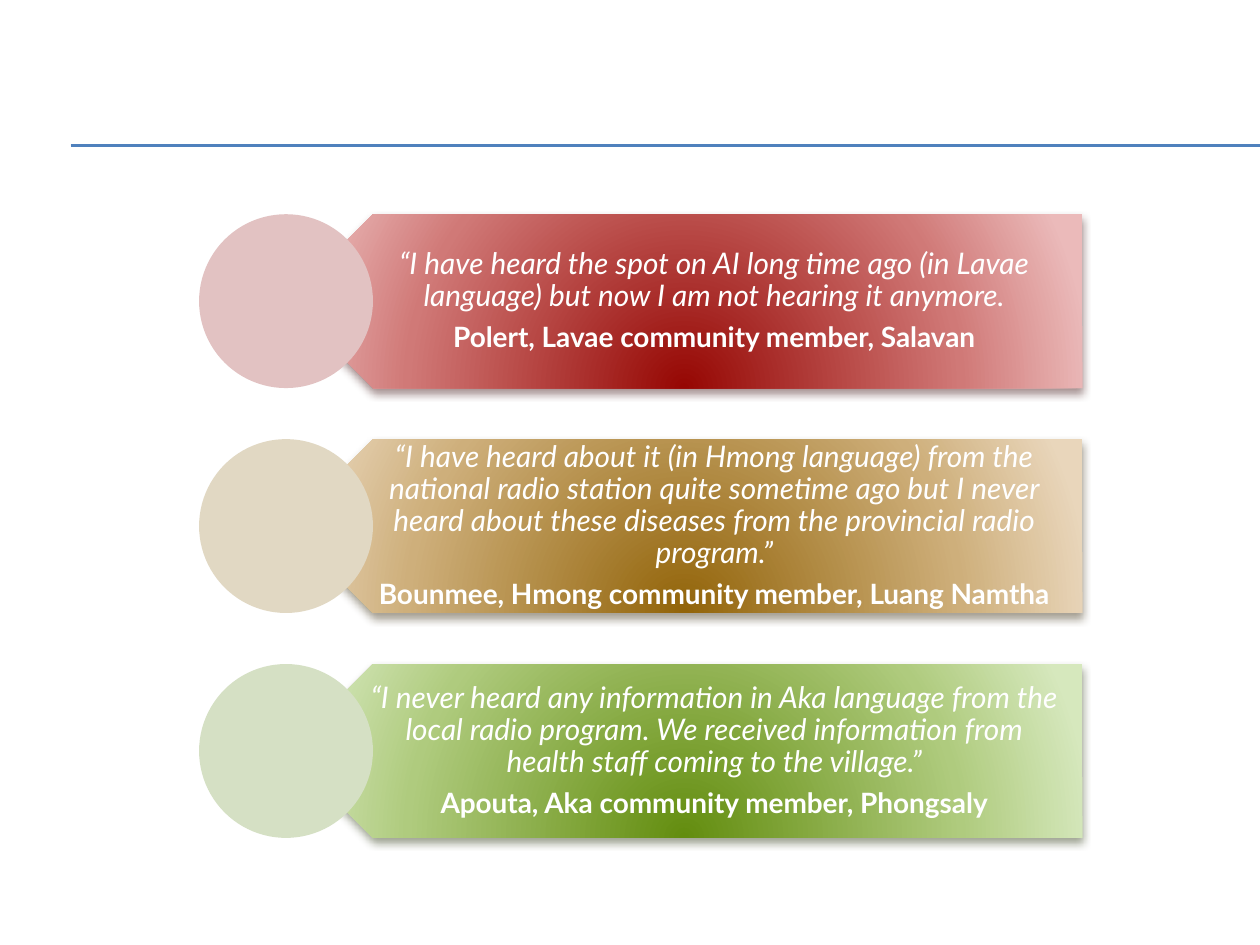
from lxml import etree
from pptx import Presentation
from pptx.dml.color import RGBColor
from pptx.enum.shapes import MSO_CONNECTOR as Connector, MSO_SHAPE as Shape
from pptx.enum.text import MSO_ANCHOR as Anchor, PP_ALIGN as Align
from pptx.oxml import parse_xml
from pptx.oxml.ns import nsdecls, qn
from pptx.util import Inches, Pt

QUOTES = [
    ("“I have heard the spot on AI long time ago (in Lavae language) but now I am not hearing it anymore.",
     "Polert, Lavae community member, Salavan",
     ("960703", "D07977", "EBBABA"), "441B1A", "E2C2C2"),
    ("“I have heard about it (in Hmong language) from the national radio station quite sometime ago "
     "but I never heard about these diseases from the provincial radio program.”",
     "Bounmee, Hmong community member, Luang Namtha",
     ("926409", "CEAF7B", "E9D6BB"), "43371C", "E1D8C3"),
    ("“I never heard any information in Aka language from the local radio program. "
     "We received information from health staff coming to the village.”",
     "Apouta, Aka community member, Phongsaly",
     ("638D0F", "AFCB7E", "D6E8BD"), "37421E", "D5E0C4"),
]
STOPS = (0, 68, 100)
FIRST_TOP, ROW_STEP, ROW_HEIGHT = 1.7, 1.785, 1.38
BANNER_LEFT, BANNER_WIDTH, CIRCLE_LEFT = 2.27, 6.32, 1.58


def color(value):
    return RGBColor.from_string(value)


def add_text(paragraph, text, size=17, font="Lato", fill="FFFFFF", bold=False, italic=False):
    paragraph.alignment = Align.CENTER
    paragraph.line_spacing = 0.9
    paragraph.space_after = Pt(6)
    run = paragraph.add_run()
    run.text = text
    run.font.name = font
    run.font.size = Pt(size)
    run.font.bold = bold
    run.font.italic = italic
    run.font.color.rgb = color(fill)


class QuoteSlide:
    line_color = "4F81BD"
    line_width = Pt(0.75)
    insets = (0.61, 0.07, 0.13, 0.07)

    def __init__(self, presentation):
        self.slide = presentation.slides.add_slide(presentation.slide_layouts[6])

    def rule(self, left, right, top):
        line = self.slide.shapes.add_connector(
            Connector.STRAIGHT, Inches(left), Inches(top), Inches(right), Inches(top))
        line.line.color.rgb = color(self.line_color)
        line.line.width = self.line_width
        etree.SubElement(line._element.spPr, qn("a:effectLst"))

    def shape(self, kind, left, top, width, height, fill):
        shape = self.slide.shapes.add_shape(
            kind, Inches(left), Inches(top), Inches(width), Inches(height))
        shape.shadow.inherit = False
        shape.fill.solid()
        shape.fill.fore_color.rgb = color(fill)
        shape.line.fill.background()
        return shape

    def banner(self, left, top, width, height, colors, shadow):
        shape = self.shape(Shape.PENTAGON, left, top, width, height, colors[0])
        properties = shape._element.spPr
        properties.find(qn("a:xfrm")).set("flipH", "1")
        stops = "".join(
            f'<a:gs pos="{position * 1000}"><a:srgbClr val="{value}"/></a:gs>'
            for position, value in zip(STOPS, colors))
        gradient = parse_xml(
            f'<a:gradFill {nsdecls("a")} rotWithShape="1"><a:gsLst>{stops}</a:gsLst>'
            '<a:path path="circle"><a:fillToRect l="50000" t="130000" r="50000" b="-30000"/>'
            '</a:path></a:gradFill>')
        properties.replace(properties.find(qn("a:solidFill")), gradient)
        properties.find(qn("a:effectLst")).append(parse_xml(
            f'<a:outerShdw {nsdecls("a")} blurRad="{Pt(4.5)}" dist="{Pt(3)}" dir="5400000" '
            f'rotWithShape="0"><a:srgbClr val="{shadow}"><a:alpha val="48000"/></a:srgbClr>'
            '</a:outerShdw>'))

    def quote(self, left, top, width, height, words, speaker):
        box = self.slide.shapes.add_textbox(
            Inches(left), Inches(top), Inches(width), Inches(height))
        frame = box.text_frame
        frame.word_wrap = True
        frame.vertical_anchor = Anchor.MIDDLE
        (frame.margin_left, frame.margin_top,
         frame.margin_right, frame.margin_bottom) = map(Inches, self.insets)
        add_text(frame.paragraphs[0], words, italic=True)
        add_text(frame.add_paragraph(), speaker, size=16, bold=True)


def main():
    presentation = Presentation()
    presentation.slide_width = Inches(10)
    presentation.slide_height = Inches(7.5)
    page = QuoteSlide(presentation)
    for top in (1.15, 1.16):
        page.rule(0.56, 10, top)
    for row, (words, speaker, colors, shadow, circle) in enumerate(QUOTES):
        top = FIRST_TOP + row * ROW_STEP
        area = (BANNER_LEFT, top, BANNER_WIDTH, ROW_HEIGHT)
        page.banner(*area, colors, shadow)
        page.quote(*area, words, speaker)
        page.shape(Shape.OVAL, CIRCLE_LEFT, top, ROW_HEIGHT, ROW_HEIGHT, circle)
    presentation.save("out.pptx")


if __name__ == "__main__":
    main()
